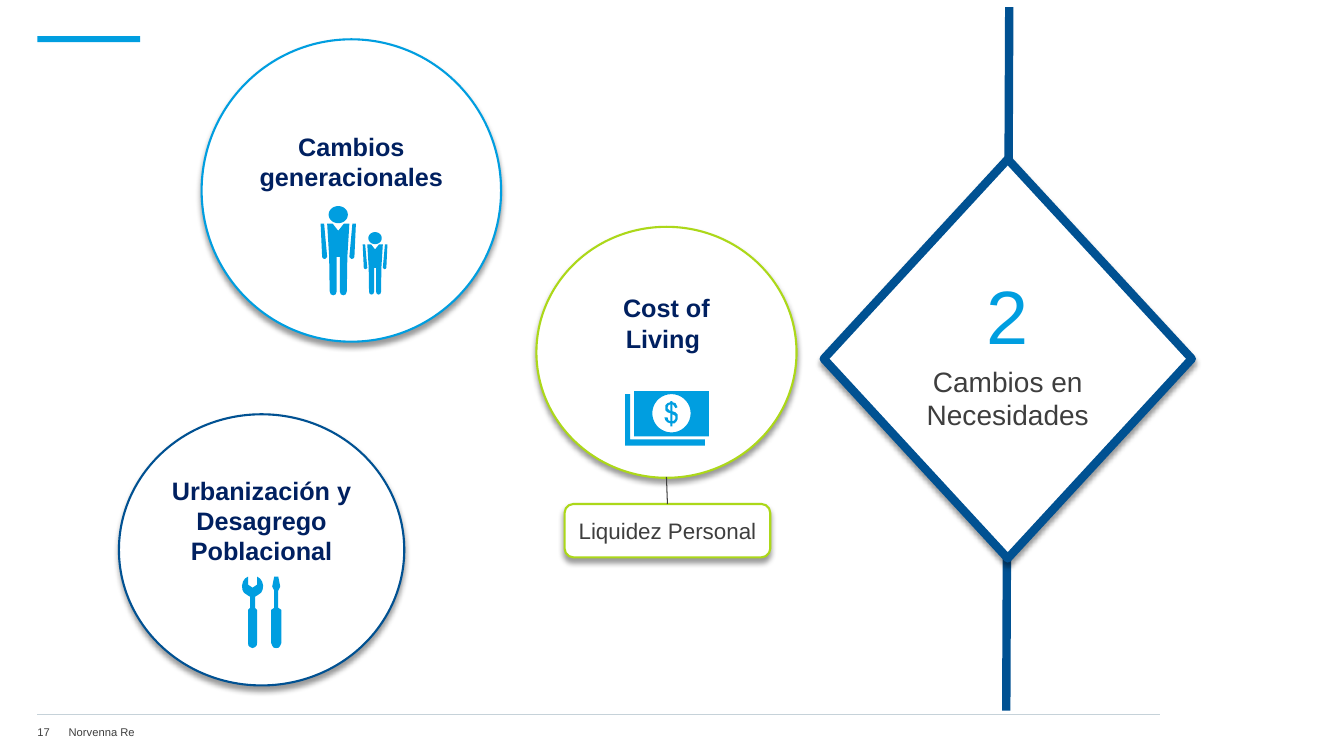
"""Build the slide on changing needs: three topic circles beside a numbered diamond."""
import math
from dataclasses import dataclass

from lxml import etree
from pptx import Presentation, slide, util as u
from pptx.dml import color
from pptx.enum import shapes, text
from pptx.oxml import ns
from pptx.shapes import autoshape, connector
from pptx.text import text as txt

Point = tuple[float, float]
Contour = list[Point]
CELL = u.Inches(0.1)


@dataclass(frozen=True)
class Theme:
    font: str = "Arial"
    sky: str = "009EE0"
    blue: str = "005192"
    lime: str = "ACD819"
    navy: str = "002060"
    ink: str = "3E3E3E"
    rule: str = "C6D2D9"
    paper: str = "FFFFFF"
    shade: str = "000000"
    small: float = 8
    label: float = 16
    topic: float = 18
    title: float = 20
    number: float = 54


@dataclass(frozen=True)
class Area:
    column: float
    row: float
    columns: float
    rows: float

    def lengths(self) -> list[int]:
        return [cells(n) for n in (self.column, self.row, self.columns, self.rows)]


@dataclass(frozen=True)
class Panel:
    kind: shapes.MSO_SHAPE
    area: Area
    outline: str
    weight: float


@dataclass(frozen=True)
class Topic:
    words: str
    area: Area
    outline: str


@dataclass(frozen=True)
class Footer:
    words: str
    area: Area


THEME = Theme()
TOPICS = [
    Topic("Cambios generacionales", Area(20, 3.9, 29.7, 30), THEME.sky),
    Topic("Cost of Living ", Area(53.2, 22.5, 25.8, 24.9), THEME.lime),
    Topic("Urbanización y Desagrego Poblacional", Area(11.8, 41.1, 28.3, 26.9), THEME.blue),
]
FOOTERS = [Footer("17", Area(3.7, 71.4, 3.1, 2.4)),
           Footer("Norvenna Re", Area(6.8, 71.4, 107.8, 2.4))]

TORSO = [(0, 2.5), (0.55, 1.8), (1.1, 1.8), (0.9, 5.1), (0.85, 8.5), (0.75, 8.8),
         (0.5, 8.9), (0.25, 8.8), (0.15, 8.5), (0.15, 5.1), (0, 5.1)]
ARM = [(1.4, 1.8), (1.75, 1.8), (1.6, 5.1), (1.5, 5.25), (1.3, 5.3), (1.1, 5.1)]
WRENCH = [(0, 1.1), (0.45, 0.8), (0.45, 0), (0.75, 0.2), (0.95, 0.5), (1.05, 0.9),
          (1, 1.3), (0.85, 1.6), (0.5, 1.85), (0.25, 2), (0.25, 3.1), (0.45, 3.3),
          (0.45, 6.6), (0.4, 6.85), (0.25, 7), (0, 7.1)]
SCREWDRIVER = [(0, 0), (0.2, 0), (0.4, 1), (0.2, 1.4), (0.2, 3.1), (0.5, 3.3),
               (0.5, 6.6), (0.4, 6.85), (0.25, 7.05), (0, 7.1)]
DOLLAR = [
    [(0.6, 2.5), (0.6, 2.2), (0.3, 2.1), (0.1, 1.9), (0, 1.6), (0.3, 1.6), (0.4, 1.9),
     (0.6, 2), (0.6, 1.2), (0.3, 1.1), (0.1, 0.9), (0.1, 0.4), (0.3, 0.2), (0.6, 0.1),
     (0.6, 0), (0.8, 0), (0.8, 0.1), (1.1, 0.2), (1.3, 0.6), (1.1, 0.7), (0.9, 0.4),
     (0.8, 0.3), (0.8, 1), (1.1, 1.1), (1.3, 1.3), (1.3, 1.8), (1.2, 2), (1, 2.2),
     (0.8, 2.2), (0.8, 2.5)],
    [(0.6, 0.3), (0.4, 0.4), (0.3, 0.7), (0.4, 0.8), (0.6, 1)],
    [(0.8, 2), (1, 1.9), (1.1, 1.7), (1.1, 1.5), (1, 1.4), (0.8, 1.3)],
]
BACK_NOTE = [(0, 0), (0.5, 0), (0.5, 4.5), (7.9, 4.5), (7.9, 5.1), (0, 5.1)]
FRONT_NOTE = [(0, 0), (7.4, 0), (7.4, 4.5), (0, 4.5)]


def cells(count: float) -> int:
    return round(count * CELL)


def rgb(code: str) -> color.RGBColor:
    return color.RGBColor.from_string(code)


def mirrored(half: Contour) -> Contour:
    return half + [(-x, y) for x, y in reversed(half)]


def disc(centre: Point, across: float, down: float, steps: int = 36) -> Contour:
    turns = [2 * math.pi * step / steps for step in range(steps)]
    return [(centre[0] + across * math.cos(t), centre[1] + down * math.sin(t)) for t in turns]


def placed(contours: list[Contour], left: float, top: float, scale: float = 1) -> list[Contour]:
    return [[(left + x * scale, top + y * scale) for x, y in points] for points in contours]


def write(para: txt._Paragraph, words: str, size: float, ink: str, bold: bool = False) -> None:
    span = para.add_run()
    span.text = words
    span.font.name, span.font.size, span.font.bold = THEME.font, u.Pt(size), bold
    span.font.color.rgb = rgb(ink)


def set_frame(frame: txt.TextFrame, sides: float, ends: float, anchor: text.MSO_ANCHOR) -> None:
    frame.word_wrap = True
    frame.vertical_anchor = anchor
    frame.margin_left = frame.margin_right = cells(sides)
    frame.margin_top = frame.margin_bottom = cells(ends)


def add_panel(page: slide.Slide, panel: Panel) -> autoshape.Shape:
    box = page.shapes.add_shape(panel.kind, *panel.area.lengths())
    box.fill.solid()
    box.fill.fore_color.rgb = rgb(THEME.paper)
    box.line.color.rgb, box.line.width = rgb(panel.outline), u.Pt(panel.weight)
    box.shadow.inherit = False
    effects = box._element.spPr.find(ns.qn("a:effectLst"))
    shadow = etree.SubElement(effects, ns.qn("a:outerShdw"), blurRad=str(u.Pt(4)),
                              dist=str(u.Pt(3)), dir="5400000", rotWithShape="0")
    tint = etree.SubElement(shadow, ns.qn("a:srgbClr"), val=THEME.shade)
    etree.SubElement(tint, ns.qn("a:alpha"), val="40000")
    set_frame(box.text_frame, 1, 0.5, text.MSO_ANCHOR.MIDDLE)
    box.text_frame.paragraphs[0].alignment = text.PP_ALIGN.CENTER
    return box


def add_topic(page: slide.Slide, topic: Topic) -> None:
    box = add_panel(page, Panel(shapes.MSO_SHAPE.OVAL, topic.area, topic.outline, 1.5))
    box.text_frame.margin_bottom = cells(6.3)
    write(box.text_frame.paragraphs[0], topic.words, THEME.topic, THEME.navy, True)


def add_line(page: slide.Slide, start: Point, end: Point, ink: str,
             weight: float) -> connector.Connector:
    line = page.shapes.add_connector(shapes.MSO_CONNECTOR.STRAIGHT,
                                     *(cells(n) for n in start + end))
    line.line.color.rgb, line.line.width = rgb(ink), u.Pt(weight)
    etree.SubElement(line._element.spPr, ns.qn("a:effectLst"))
    return line


def paint(shape: autoshape.Shape) -> None:
    shape.fill.solid()
    shape.fill.fore_color.rgb = rgb(THEME.sky)
    shape.line.fill.background()
    shape.shadow.inherit = False


def add_icon(page: slide.Slide, contours: list[Contour]) -> None:
    outlines = [[(cells(x), cells(y)) for x, y in points] for points in contours]
    builder = page.shapes.build_freeform(*outlines[0][0])
    for index, points in enumerate(outlines):
        if index:
            builder.move_to(*points[0])
        builder.add_line_segments(points[1:], close=True)
    paint(builder.convert_to_shape())


def add_text(page: slide.Slide, area: Area, anchor: text.MSO_ANCHOR) -> txt.TextFrame:
    frame = page.shapes.add_textbox(*area.lengths()).text_frame
    set_frame(frame, 0, 0, anchor)
    return frame


def main() -> None:
    deck = Presentation()
    deck.slide_width, deck.slide_height = u.Inches(13.33), u.Inches(7.5)
    page = deck.slides.add_slide(deck.slide_layouts[6])

    add_line(page, (3.7, 70.9), (115.1, 70.9), THEME.rule, 0.75)
    for footer in FOOTERS:
        frame = add_text(page, footer.area, text.MSO_ANCHOR.MIDDLE)
        write(frame.paragraphs[0], footer.words, THEME.small, THEME.ink)
    paint(page.shapes.add_shape(shapes.MSO_SHAPE.RECTANGLE, *Area(3.7, 3.6, 10.2, 0.6).lengths()))

    add_line(page, (100.1, 0.7), (99.8, 70.5), THEME.blue, 6)
    add_panel(page, Panel(shapes.MSO_SHAPE.FLOWCHART_DECISION,
                          Area(81.7, 15.8, 36.5, 39.6), THEME.blue, 6))
    heading = add_text(page, Area(88.2, 26.7, 23.5, 12.2), text.MSO_ANCHOR.TOP)
    number, title = heading.paragraphs[0], heading.add_paragraph()
    number.alignment = title.alignment = text.PP_ALIGN.CENTER
    title.space_before = u.Pt(3)
    write(number, "2", THEME.number, THEME.sky)
    write(title, "Cambios en Necesidades", THEME.title, THEME.ink)

    for topic in TOPICS:
        add_topic(page, topic)
    liquidity = add_panel(page, Panel(shapes.MSO_SHAPE.ROUNDED_RECTANGLE,
                                      Area(56, 50, 20.4, 5.3), THEME.lime, 1.5))
    write(liquidity.text_frame.paragraphs[0], "Liquidez Personal", THEME.label, THEME.ink)
    add_line(page, (66.1, 47.3), (66.2, 50), THEME.ink, 0.75).end_connect(liquidity, 0)

    person = [disc((0, 0.9), 0.95, 0.85), mirrored(TORSO), ARM, [(-x, y) for x, y in ARM]]
    add_icon(page, placed(person, 33.55, 20.4) + placed(person, 37.2, 23, 0.7))
    add_icon(page, placed([FRONT_NOTE, disc((3.7, 2.2), 1.9, 1.9)], 62.9, 38.8))
    add_icon(page, placed([BACK_NOTE], 62, 39.1))
    add_icon(page, placed(DOLLAR, 65.9, 39.8))
    add_icon(page, placed([mirrored(WRENCH)], 25.05, 57.2))
    add_icon(page, placed([mirrored(SCREWDRIVER)], 27.4, 57.2))
    deck.save("out.pptx")


if __name__ == "__main__":
    main()
